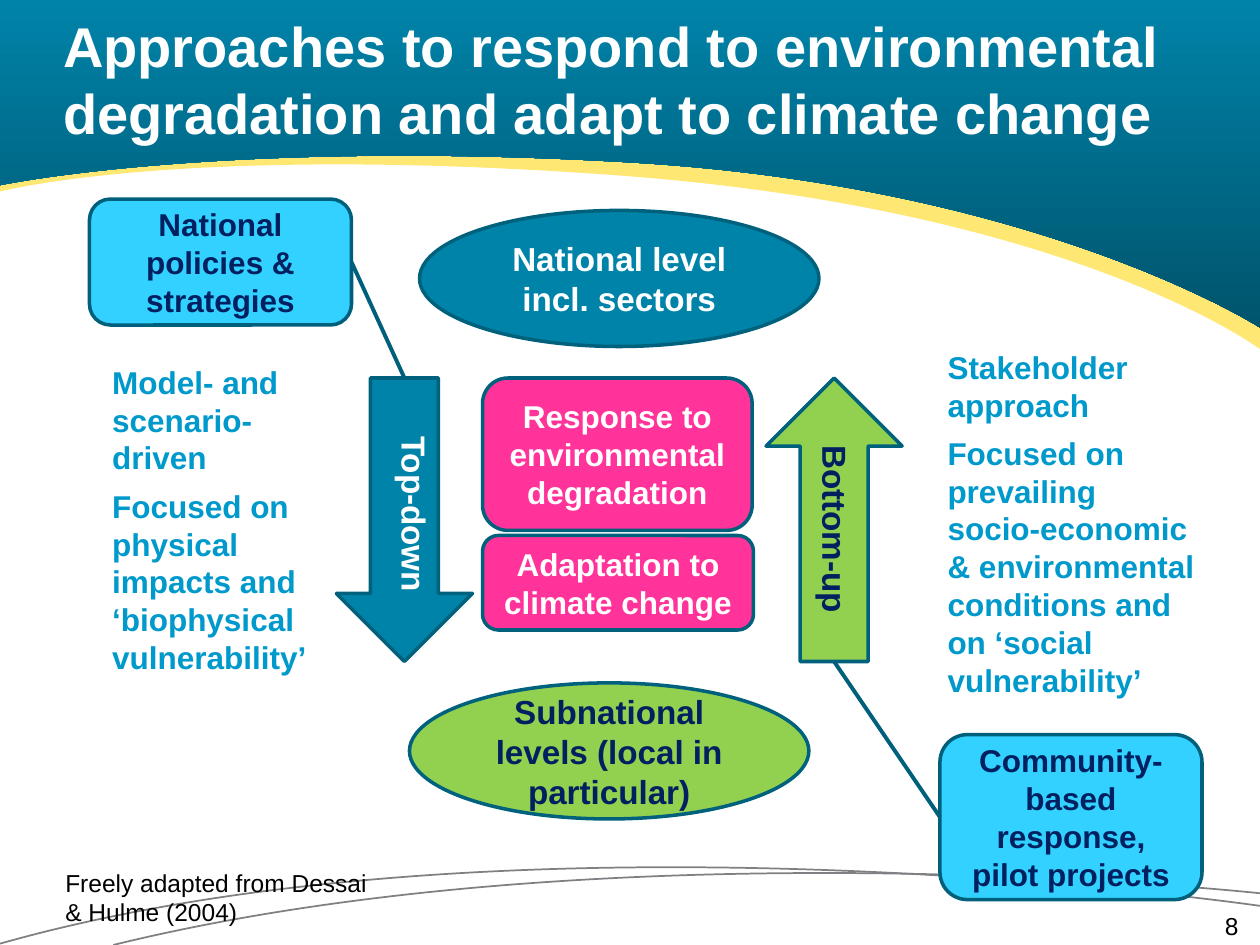
from dataclasses import dataclass

from lxml import etree
from pptx import Presentation
from pptx import util as u
from pptx.dml.color import RGBColor
from pptx.enum import shapes, text
from pptx.oxml.ns import qn

Point = tuple[float, float]
Box = tuple[float, float, float, float]

COLORS = {
    "teal": "0083A9", "deep": "00546C", "outline": "00617D", "join": "005F7B",
    "yellow": "FFE774", "grey": "7E8083", "green": "92D050", "sky": "32D1FF",
    "pink": "FF3399", "navy": "002060", "blue": "0099CC",
    "white": "FFFFFF", "black": "000000",
}
KIND = shapes.MSO_SHAPE
ALIGN = text.PP_ALIGN
ANCHOR = text.MSO_ANCHOR


@dataclass
class Node:
    kind: int
    box: Box
    fill: str
    label: str = ""
    color: str = "white"
    size: int = 18
    line: str = "outline"
    rotation: int = 0


@dataclass
class Note:
    box: Box
    label: str
    size: int
    color: str = "black"
    bold: bool = False
    align: int = ALIGN.LEFT
    rotation: int = 0
    inset: bool = True


def rgb(name: str) -> RGBColor:
    return RGBColor.from_string(COLORS[name])


def place(sp, box: Box) -> None:
    sp.left, sp.top, sp.width, sp.height = map(u.Inches, box)


def write(tf, paragraphs: list[str], size: int, color: str, bold=True,
          align=ALIGN.LEFT, gap=0) -> None:
    tf.word_wrap = True
    for i, words in enumerate(paragraphs):
        p = tf.add_paragraph() if i else tf.paragraphs[0]
        p.alignment = align
        p.space_before = u.Pt(gap if i else 0)
        r = p.add_run()
        r.text = words
        r.font.name, r.font.size, r.font.bold = "Arial", u.Pt(size), bold
        r.font.color.rgb = rgb(color)


def clear_insets(tf) -> None:
    tf.margin_left = tf.margin_right = tf.margin_top = tf.margin_bottom = 0


def add_curve(s, points: list[Point], layer: int, corners: tuple[Point, ...] = ()):
    """Cubic curve behind the placeholders, closed through any corners."""
    pts = [(u.Inches(x), u.Inches(y)) for x, y in (*points, *corners)]
    builder = s.shapes.build_freeform(*pts[0], scale=1.0)
    builder.add_line_segments(pts[1:], close=bool(corners))
    sp = builder.convert_to_shape()
    sp.shadow.inherit = False
    s.shapes._spTree.insert(2 + layer, sp._element)

    # Every three points after the first become one cubic segment
    segments = list(sp._element.iter(qn("a:lnTo")))[:len(points) - 1]
    for i in range(0, len(segments), 3):
        cubic = etree.Element(qn("a:cubicBezTo"))
        segments[i].addprevious(cubic)
        for segment in segments[i:i + 3]:
            cubic.append(segment[0])
            segment.getparent().remove(segment)
    return sp


def add_node(s, node: Node):
    sp = s.shapes.add_shape(node.kind, *map(u.Inches, node.box))
    sp.shadow.inherit = False
    sp.rotation = node.rotation
    sp.fill.solid()
    sp.fill.fore_color.rgb = rgb(node.fill)
    sp.line.color.rgb = rgb(node.line)
    sp.line.width = u.Pt(2)
    if node.label:
        sp.text_frame.vertical_anchor = ANCHOR.MIDDLE
        write(sp.text_frame, [node.label], node.size, node.color, align=ALIGN.CENTER)
    return sp


def add_note(s, note: Note) -> None:
    sp = s.shapes.add_textbox(*map(u.Inches, note.box))
    sp.rotation = note.rotation
    if not note.inset:
        clear_insets(sp.text_frame)
    write(sp.text_frame, [note.label], note.size, note.color, note.bold, note.align)


def add_join(s, start: Point, end: Point):
    points = [u.Inches(v) for v in start + end]
    line = s.shapes.add_connector(shapes.MSO_CONNECTOR.STRAIGHT, *points)
    line.line.color.rgb = rgb("join")
    line.line.width = u.Pt(2.25)
    etree.SubElement(line._element.spPr, qn("a:effectLst"))
    return line


def fill_list(sp, box: Box, paragraphs: list[str]) -> None:
    place(sp, box)
    tf = sp.text_frame
    tf.auto_size = text.MSO_AUTO_SIZE.NONE
    write(tf, paragraphs, 18, "blue", gap=6)
    for p in tf.paragraphs:
        pPr = p._p.get_or_add_pPr()
        pPr.set("marL", "0")
        pPr.set("indent", "0")
        etree.SubElement(pPr, qn("a:buNone"))


def add_background(s) -> None:
    arcs = [
        [(10, 7.09), (10, 7.09), (4.85, 6.53), (0.9, 7.5)],
        [(10, 7.19), (10, 7.19), (4.1, 6.33), (0, 7.49)],
    ]
    for layer, arc in enumerate(arcs):
        sp = add_curve(s, arc, layer)
        sp.fill.background()
        sp.line.color.rgb = rgb("grey")
        sp.line.width = u.Pt(1)

    # Header: yellow band below, teal gradient above
    top = ((0, -0.01), (10, -0.01))
    band = add_curve(s, [(10, 2.77), (10, 2.77), (8.54, 1.68), (5.01, 1.4),
                         (1.47, 1.13), (0, 1.52), (0, 1.52)], 2, top)
    band.fill.solid()
    band.fill.fore_color.rgb = rgb("yellow")
    header = add_curve(s, [(10, 2.6), (10, 2.6), (8.26, 1.48), (5.01, 1.29),
                           (1.75, 1.1), (0, 1.47), (0, 1.47)], 3, top)
    header.fill.gradient()
    header.fill.gradient_angle = 270
    for stop, name, position in zip(header.fill.gradient_stops, ("teal", "deep"), (0, 1)):
        stop.color.rgb = rgb(name)
        stop.position = position
    for sp in (band, header):
        sp.line.fill.background()


def main() -> None:
    prs = Presentation()
    prs.slide_width, prs.slide_height = u.Inches(10), u.Inches(7.5)
    s = prs.slides.add_slide(prs.slide_layouts[3])
    add_background(s)

    # Title and the two side lists
    title = s.shapes.title
    place(title, (0.5, 0, 9.33, 1.25))
    clear_insets(title.text_frame)
    title.text_frame.auto_size = text.MSO_AUTO_SIZE.NONE
    title.text_frame.vertical_anchor = ANCHOR.MIDDLE
    write(title.text_frame, ["Approaches to respond to environmental degradation "
                             "and adapt to climate change"], 32, "white")
    fill_list(s.placeholders[1], (0.79, 2.83, 1.92, 2.61), [
        "Model- and scenario-driven",
        "Focused on physical impacts and ‘biophysical vulnerability’"])
    fill_list(s.placeholders[2], (7.42, 2.71, 2.17, 2.91), [
        "Stakeholder approach",
        "Focused on prevailing socio-economic & environmental conditions "
        "and on ‘social vulnerability’"])

    # Levels, arrows, examples and responses
    card = KIND.FLOWCHART_ALTERNATE_PROCESS
    nodes = [
        Node(KIND.OVAL, (3.33, 1.67, 3.17, 1.08), "teal", "National level incl. sectors", size=19),
        Node(KIND.OVAL, (3.25, 5.42, 3.17, 1.08), "green",
             "Subnational levels (local in particular)", "navy", 19),
        Node(KIND.DOWN_ARROW, (2.67, 3, 1.08, 2.25), "teal"),
        Node(KIND.DOWN_ARROW, (6.08, 3, 1.08, 2.25), "green", rotation=180),
        Node(card, (0.71, 1.58, 2.08, 1), "sky", "National policies & strategies",
             "navy", line="join"),
        Node(card, (7.46, 5.83, 2.08, 1.31), "sky",
             "Community-based response, pilot projects", "navy", line="join"),
        Node(KIND.ROUNDED_RECTANGLE, (3.83, 4.25, 2.15, 0.75), "pink",
             "Adaptation to climate change"),
        Node(KIND.ROUNDED_RECTANGLE, (3.83, 3, 2.14, 1.21), "pink",
             "Response to environmental degradation"),
    ]
    _, _, down, _, policies, community, _, _ = [add_node(s, node) for node in nodes]

    # Joins between examples and arrows
    top_join = add_join(s, (2.79, 2.08), (3.21, 3))
    top_join.begin_connect(policies, 3)
    top_join.end_connect(down, 0)
    add_join(s, (7.46, 6.49), (6.62, 5.25)).begin_connect(community, 1)

    # Arrow labels, credit and page number
    for note in (
        Note((2.29, 3.87, 2, 0.42), "Top-down", 19, "white", True, ALIGN.CENTER, 90),
        Note((5.63, 3.99, 2, 0.42), "Bottom-up", 19, "navy", True, ALIGN.CENTER, 90),
        Note((0.42, 6.84, 2.67, 0.57), "Freely adapted from Dessai & Hulme (2004)", 14),
        Note((7.5, 7.23, 2.33, 0.18), "8", 14, align=ALIGN.RIGHT, inset=False),
    ):
        add_note(s, note)

    prs.save("out.pptx")


if __name__ == "__main__":
    main()
